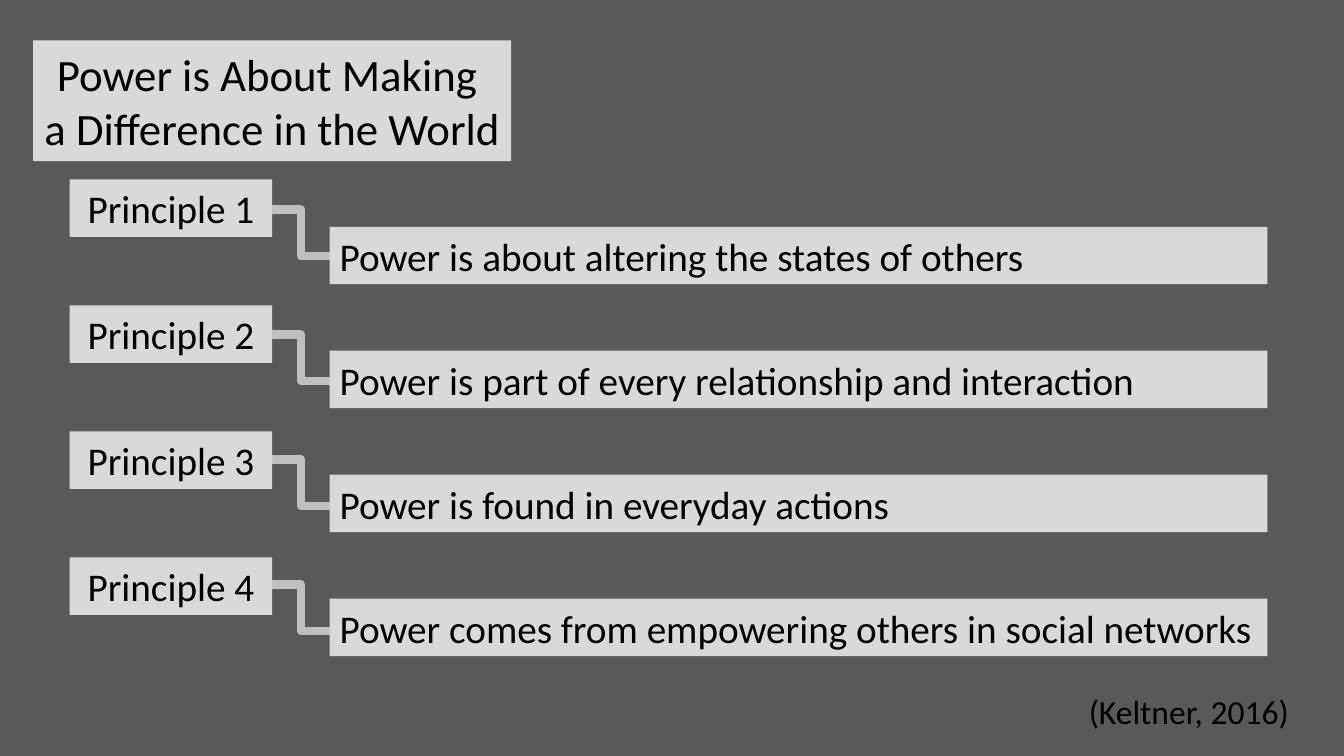
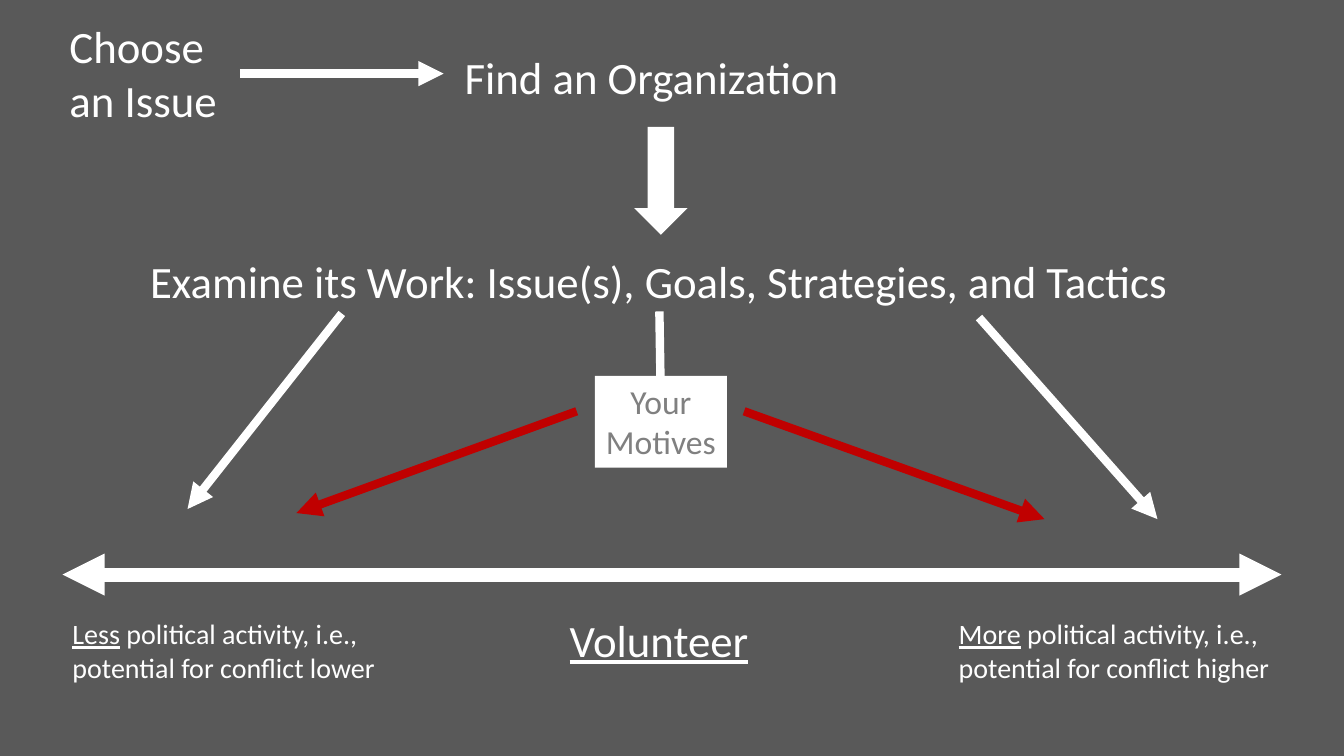
"""Build two slides on the principles of power and on choosing where to volunteer."""
import pptx
import pptx.util
import pptx.dml.color
import pptx.enum.shapes
import pptx.enum.text
import pptx.oxml

Inches = pptx.util.Inches
Shape = pptx.enum.shapes.MSO_SHAPE
Link = pptx.enum.shapes.MSO_CONNECTOR
Align = pptx.enum.text.PP_ALIGN
Anchor = pptx.enum.text.MSO_ANCHOR

DARK, PANEL, SILVER, GREY = "595959", "D9D9D9", "BFBFBF", "808080"
BLACK, WHITE, RED = "000000", "FFFFFF", "C00000"

TITLE = ["Power is About Making ", "a Difference in the World"]
RULES = [
    "Power is about altering the states of others",
    "Power is part of every relationship and interaction",
    "Power is found in everyday actions",
    "Power comes from empowering others in social networks",
]
SOURCE = "(Keltner, 2016)"

STEPS = [
    ((0.59, 0.14, 1.72, 1.18), ["Choose", "an Issue"]),
    ((4.51, 0.44, 4.07, 0.64), ["Find an Organization"]),
    ((1.39, 2.47, 10.4, 0.64), ["Examine its Work: Issue(s), Goals, Strategies, and Tactics"]),
]
GOAL = "Volunteer"
ENDS = [
    (0.62, "Less", " political activity, i.e., potential for conflict lower"),
    (9.41, "More", " political activity, i.e., potential for conflict higher"),
]
MOTIVES = ["Your", "Motives"]
ARROWS = [
    ((2.38, 0.73), (4.4, 0.73), WHITE, 6, ["tail"]),
    ((3.39, 3.11), (1.86, 5.05), WHITE, 6, ["tail"]),
    ((9.71, 3.15), (11.48, 5.15), WHITE, 6, ["tail"]),
    ((5.72, 4.08), (2.94, 5.09), RED, 6, ["tail"]),
    ((7.38, 4.08), (10.36, 5.15), RED, 6, ["tail"]),
    ((6.54, 3.09), (6.55, 3.73), WHITE, 6, []),
    ((0.62, 5.7), (12.71, 5.7), WHITE, 10, ["head", "tail"]),
]


def paint(fill, code):
    """Give a fill one solid colour."""
    fill.solid()
    fill.fore_color.rgb = pptx.dml.color.RGBColor.from_string(code)


def write(shape, lines, size, color, align=Align.LEFT, anchor=Anchor.TOP):
    """Write lines, each a string or a pair whose first part is underlined."""
    frame = shape.text_frame
    frame.word_wrap = True
    frame.vertical_anchor = anchor
    for index, line in enumerate(lines):
        para = frame.add_paragraph() if index else frame.paragraphs[0]
        para.alignment = align
        para.font.name = "Calibri"
        para.font.size = pptx.util.Pt(size)
        paint(para.font.fill, color)
        parts = (line,) if isinstance(line, str) else line
        for place, part in enumerate(parts):
            run = para.add_run()
            run.text = part
            if len(parts) > 1 and place == 0:
                run.font.underline = True
    return frame


def label(slide, at, lines, size, color=WHITE):
    """Add plain text on the background."""
    box = slide.shapes.add_textbox(*map(Inches, at))
    return write(box, lines, size, color)


def block(slide, at, code, kind=Shape.RECTANGLE):
    """Add a filled shape without outline."""
    shape = slide.shapes.add_shape(kind, *map(Inches, at))
    shape.shadow.inherit = False
    paint(shape.fill, code)
    shape.line.fill.background()
    return shape


def panel(slide, at, lines, size, align=Align.CENTER):
    """Add a light panel with black text."""
    write(block(slide, at, PANEL), lines, size, BLACK, align, Anchor.MIDDLE)


def join(slide, start, end, code, width, tips=(), kind=Link.STRAIGHT):
    """Draw a connector with triangles at the named tips."""
    line = slide.shapes.add_connector(kind, *map(Inches, start + end))
    paint(line.line.fill, code)
    line.line.width = pptx.util.Pt(width)
    space = pptx.oxml.ns.nsdecls("a")
    for tip in tips:
        mark = pptx.oxml.parse_xml(f'<a:{tip}End {space} type="triangle"/>')
        line.line._get_or_add_ln().append(mark)
    line._element.spPr.append(pptx.oxml.parse_xml(f"<a:effectLst {space}/>"))


def rules(slide):
    """Fill the slide of the four principles."""
    panel(slide, (0.33, 0.4, 4.74, 1.2), TITLE, 32)
    for index, rule in enumerate(RULES):
        bend = 2.08 + 1.24 * index
        join(slide, (2.7, bend), (3.27, bend + 0.46), SILVER, 6, kind=Link.ELBOW)
        panel(slide, (0.69, 1.78 + 1.25 * index, 2.01, 0.57), [f"Principle {index + 1}"], 28)
        panel(slide, (3.27, 2.25 + 1.23 * index, 9.3, 0.57), [rule], 28, Align.LEFT)
    label(slide, (10.7, 6.81, 2.25, 0.5), [SOURCE], 24, BLACK)


def choice(slide):
    """Fill the slide of the path to volunteering."""
    for at, lines in STEPS:
        label(slide, at, lines, 32)
    block(slide, (6.29, 1.26, 0.53, 1.07), WHITE, Shape.DOWN_ARROW)
    for arrow in ARROWS:
        join(slide, *arrow)
    card = block(slide, (5.9, 3.73, 1.31, 0.91), WHITE)
    frame = write(card, MOTIVES, 24, GREY, Align.CENTER)
    frame.margin_left = frame.margin_right = Inches(0.05)
    for left, *parts in ENDS:
        label(slide, (left, 6.07, 3.3, 0.77), [parts], 20)
    goal = label(slide, (5.55, 6.03, 2.05, 0.64), [GOAL], 32)
    goal.paragraphs[0].runs[0].font.underline = True


def main():
    """Build and save the deck."""
    deck = pptx.Presentation()
    deck.slide_width, deck.slide_height = Inches(13.33), Inches(7.5)
    paint(deck.slide_master.background.fill, DARK)
    for build in (rules, choice):
        build(deck.slides.add_slide(deck.slide_layouts[6]))
    deck.save("out.pptx")


if __name__ == "__main__":
    main()
